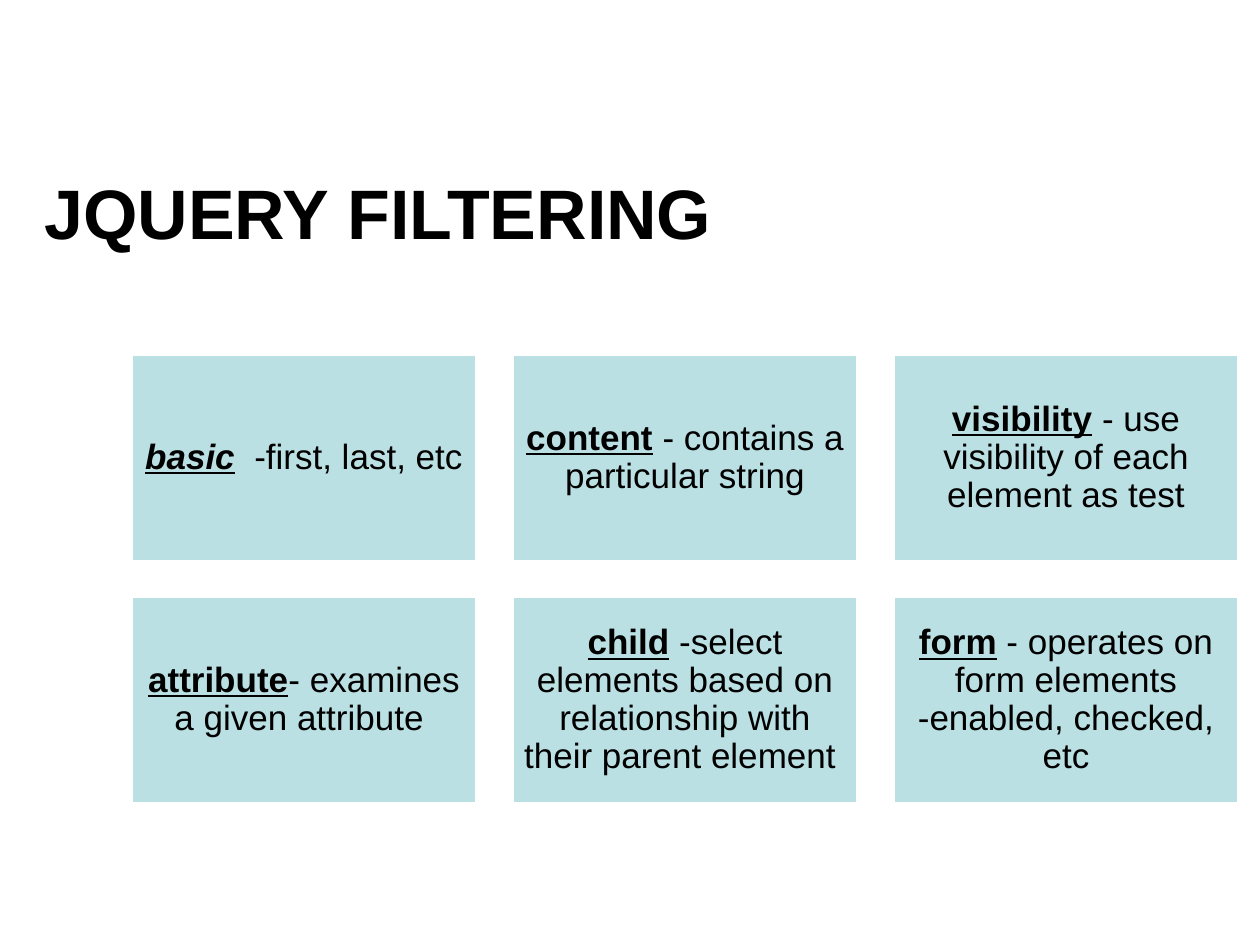
from pptx import Presentation
from pptx.dml.color import RGBColor
from pptx.enum.shapes import MSO_SHAPE
from pptx.enum.text import MSO_ANCHOR, PP_ALIGN
from pptx.util import Inches, Pt

TITLE = "JQUERY FILTERING"
FILTERS = [
    ("basic", "  -first, last, etc"),
    ("content", " - contains a particular string"),
    ("visibility", " - use visibility of each element as test"),
    ("attribute", "- examines a given attribute "),
    ("child", " -select elements based on relationship with their parent element "),
    ("form", " - operates on form elements -enabled, checked, etc"),
]
ITALIC_FILTER = "basic"

BLACK = RGBColor(0x00, 0x00, 0x00)
WHITE = RGBColor(0xFF, 0xFF, 0xFF)
PALE_TEAL = RGBColor(0xBB, 0xE0, 0xE3)
FONT = "Arial"

COLUMNS = 3
GRID_LEFT, GRID_TOP = 131, 354
BOX_W, BOX_H = 346, 208
GAP_X, GAP_Y = 35, 34
INSET = 10


def px(n):
    return round(n * Inches(1) / 126)


def add_run(p, text, size, bold=False):
    r = p.add_run()
    r.text = text
    r.font.name = FONT
    r.font.size = Pt(size)
    r.font.bold = bold
    r.font.color.rgb = BLACK
    return r


def add_title(slide):
    sp = slide.shapes.title
    sp.left, sp.top, sp.width, sp.height = px(32), px(157), px(1187), px(136)
    tf = sp.text_frame
    tf.vertical_anchor = MSO_ANCHOR.TOP
    tf.margin_top = px(13)
    p = tf.paragraphs[0]
    p.alignment = PP_ALIGN.LEFT
    add_run(p, TITLE, 40, bold=True)


def add_filter(slide, index, name, description):
    row, col = divmod(index, COLUMNS)
    sp = slide.shapes.add_shape(
        MSO_SHAPE.RECTANGLE,
        px(GRID_LEFT + col * (BOX_W + GAP_X)),
        px(GRID_TOP + row * (BOX_H + GAP_Y)),
        px(BOX_W), px(BOX_H))
    sp.shadow.inherit = False
    sp.fill.solid()
    sp.fill.fore_color.rgb = PALE_TEAL
    sp.line.color.rgb = WHITE
    sp.line.width = Pt(2)
    tf = sp.text_frame
    tf.word_wrap = True
    tf.vertical_anchor = MSO_ANCHOR.MIDDLE
    tf.margin_left = tf.margin_right = tf.margin_top = tf.margin_bottom = px(INSET)
    p = tf.paragraphs[0]
    p.alignment = PP_ALIGN.CENTER
    p.line_spacing = 0.9
    r = add_run(p, name, 20, bold=True)
    r.font.underline = True
    r.font.italic = name == ITALIC_FILTER
    add_run(p, description, 20)


def main():
    prs = Presentation()
    prs.slide_width, prs.slide_height = px(1260), px(945)
    slide = prs.slides.add_slide(prs.slide_layouts[5])
    add_title(slide)
    for index, (name, description) in enumerate(FILTERS):
        add_filter(slide, index, name, description)
    prs.save("out.pptx")


if __name__ == "__main__":
    main()
